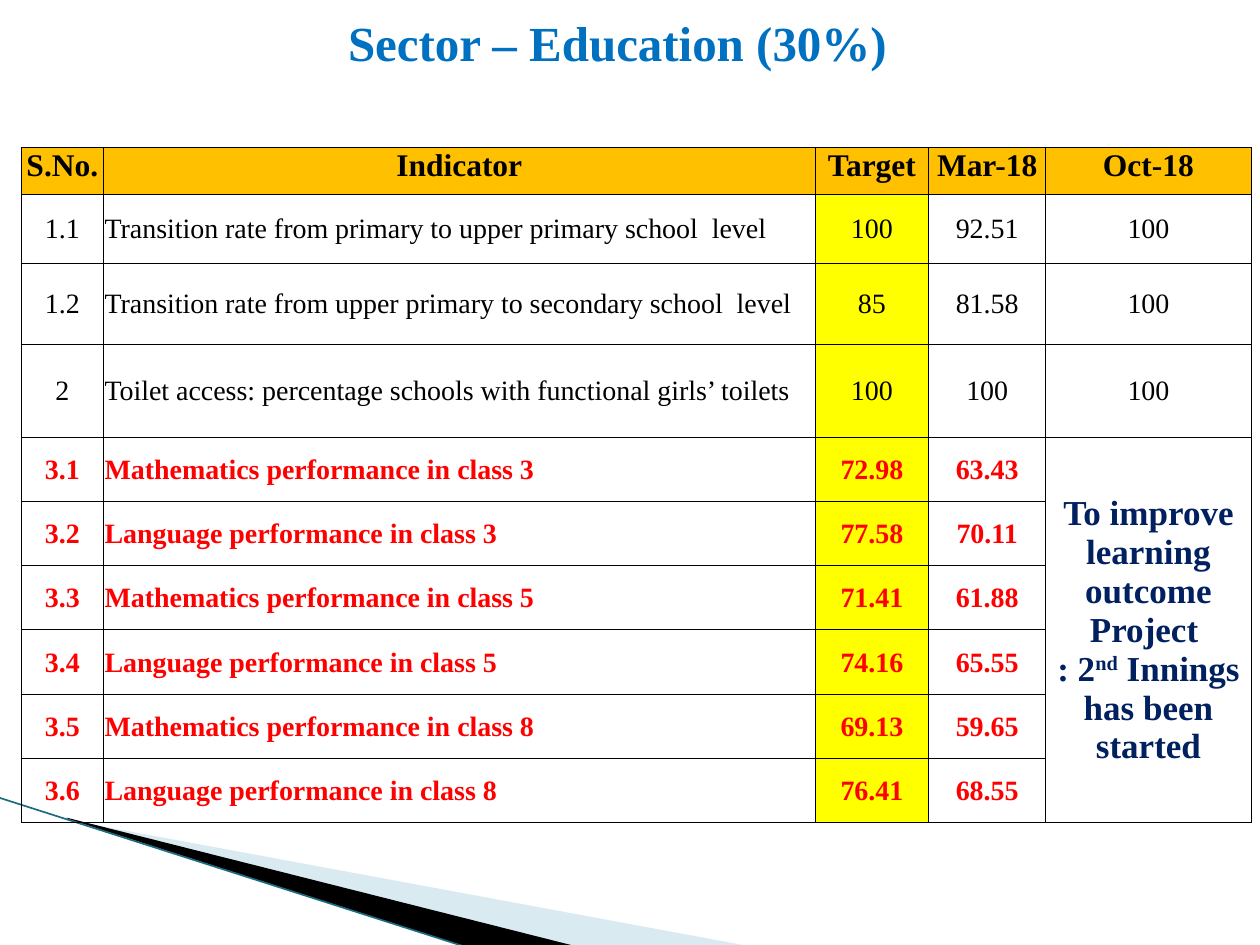
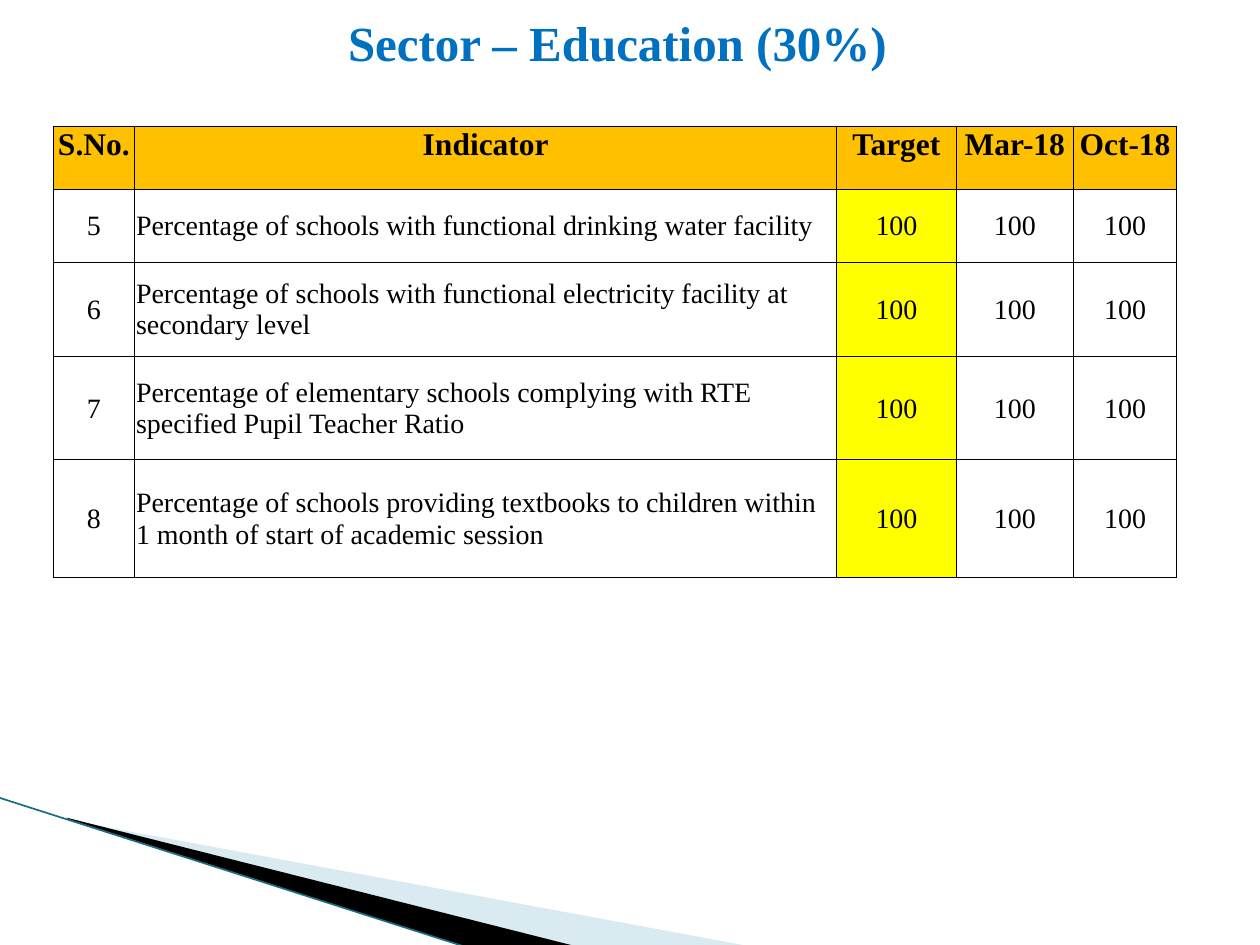
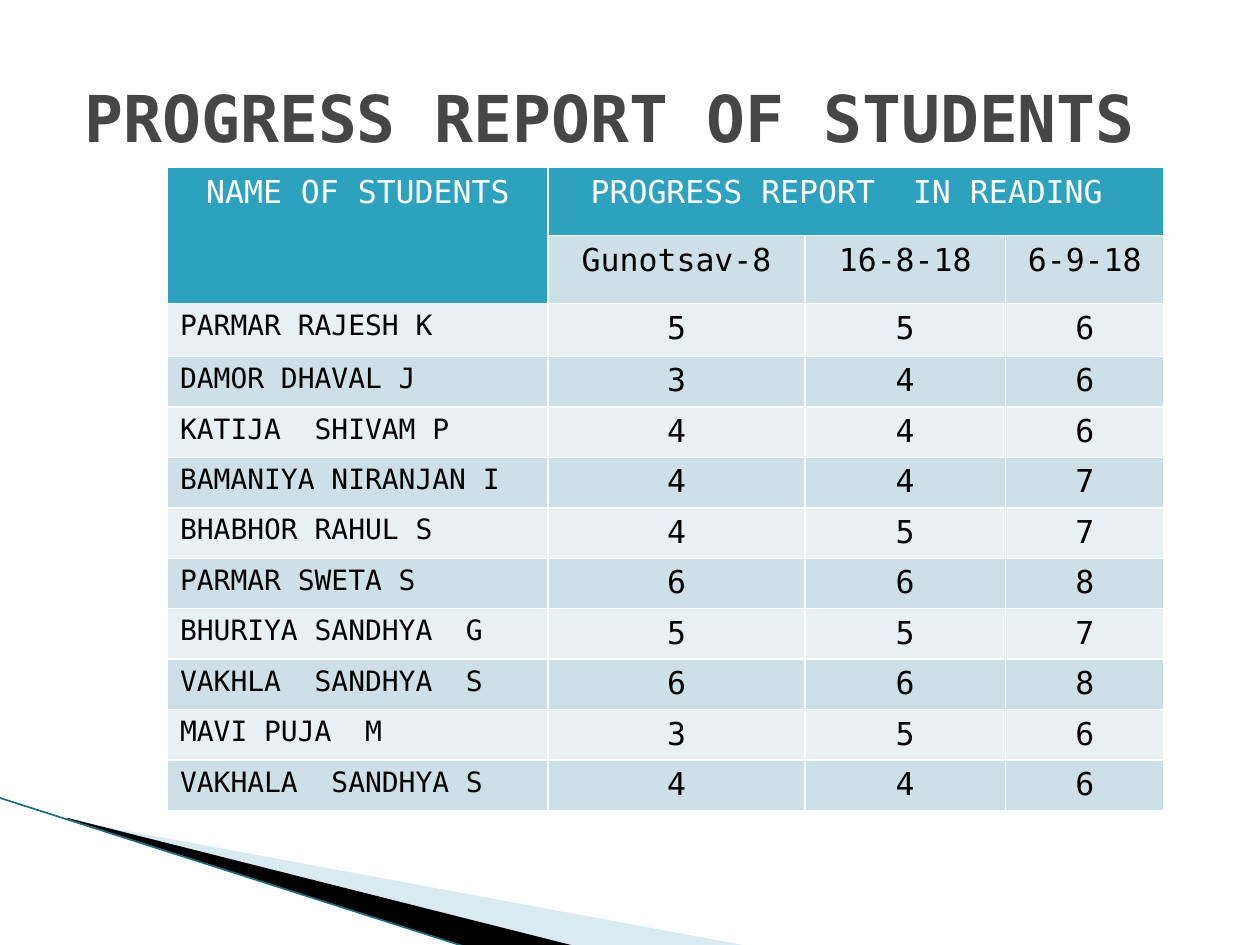
"""Build three slides of education indicators and student reading progress."""
from dataclasses import dataclass, replace

from lxml.etree import SubElement
from pptx import Presentation
from pptx.dml.color import RGBColor
from pptx.enum.shapes import MSO_CONNECTOR
from pptx.enum.text import MSO_ANCHOR, PP_ALIGN
from pptx.oxml.ns import qn
from pptx.slide import Slide
from pptx.table import Table, _Cell
from pptx.text.text import TextFrame
from pptx.util import Inches, Pt

COLORS = {
    "black": "000000", "white": "FFFFFF", "red": "FF0000", "navy": "002060",
    "blue": "0070C0", "gray": "464646", "amber": "FFC000", "yellow": "FFFF00",
    "teal": "2DA2BF", "band_dark": "CDE0E8", "band_light": "E8F0F4",
    "wedge": "A0CBDC", "edge": "1C6C80",
}
SERIF, MONO = "Times New Roman", "DejaVu Sans Mono"


@dataclass(frozen=True)
class TextStyle:
    font: str
    size: float
    color: str
    bold: bool = False
    align: PP_ALIGN = PP_ALIGN.CENTER
    baseline: int = 0


@dataclass(frozen=True)
class Title:
    text: str
    box: tuple[float, float, float, float]
    style: TextStyle


@dataclass(frozen=True)
class Grid:
    left: float
    top: float
    cols: list[float]
    rows: list[float]
    border: str
    border_width: float
    margins: tuple[float, float, float, float]


@dataclass(frozen=True)
class Wedge:
    points: list[tuple[float, float]]
    color: str
    opacity: int


Line = list[tuple[str, TextStyle]]

HEAD = TextStyle(SERIF, 18, "black", True)
BODY = TextStyle(SERIF, 16, "black")
ALERT = TextStyle(SERIF, 16, "red", True)
NOTE = TextStyle(SERIF, 20, "navy", True)
MONO_HEAD = TextStyle(MONO, 18, "white")
SCORE = TextStyle(MONO, 18, "black")
STUDENT = TextStyle(MONO, 16, "black", align=PP_ALIGN.LEFT)

SECTOR_TITLE = Title("Sector – Education (30%)", (0.8, 0, 8.2, 0.67),
                     TextStyle(SERIF, 28, "blue", True))
PROGRESS_TITLE = Title("PROGRESS REPORT OF STUDENTS ", (0.5, 0.3, 9, 1.25),
                       TextStyle(MONO, 36.9, "gray", True))

WEDGES = [
    Wedge([(0.55, 6.51), (5.95, 7.51), (4.56, 7.51), (0.55, 6.5)], "wedge", 40),
    Wedge([(0.53, 6.49), (4.57, 7.51), (3.72, 7.52), (0.54, 6.5)], "black", 100),
]

TIGHT = (0.01, 0.01, 0.01, 0)
ROOMY = (0.1, 0.05, 0.1, 0.05)
LEARNING_GRID = Grid(0.17, 1.17, [0.65, 5.65, 0.9, 0.93, 1.63],
                     [0.37, 0.55, 0.64, 0.74] + [0.51] * 6, "black", 0.5, TIGHT)
FACILITY_GRID = Grid(0.42, 1, [0.65, 5.57, 0.95, 0.93, 0.82],
                     [0.5, 0.58, 0.75, 0.82, 0.93], "black", 0.5, TIGHT)
READING_GRID = Grid(1.33, 1.33, [3.02, 2.04, 1.59, 1.26],
                    [0.54, 0.54, 0.42] + [0.39] * 9, "white", 1, ROOMY)

INDICATOR_HEADERS = ["S.No.", "Indicator", "Target", "Mar-18", "Oct-18"]
TRANSITION = [
    ["1.1", "Transition rate from primary to upper primary school  level",
     "100", "92.51", "100"],
    ["1.2", "Transition rate from upper primary to secondary school  level",
     "85", "81.58", "100"],
    ["2", "Toilet access: percentage schools with functional girls’ toilets",
     "100", "100", "100"],
]
PERFORMANCE = [
    ["3.1", "Mathematics performance in class 3", "72.98", "63.43"],
    ["3.2", "Language performance in class 3", "77.58", "70.11"],
    ["3.3", "Mathematics performance in class 5", "71.41", "61.88"],
    ["3.4", "Language performance in class 5", "74.16", "65.55"],
    ["3.5", "Mathematics performance in class 8", "69.13", "59.65"],
    ["3.6", "Language performance in class 8", "76.41", "68.55"],
]
INNINGS_NOTE: list[Line] = [
    [("To improve learning outcome Project ", NOTE)],
    [(": 2", NOTE), ("nd", replace(NOTE, baseline=30)),
     (" Innings has been started", NOTE)],
]
FACILITIES = [
    [number, text, "100", "100", "100"] for number, text in [
        ("5", "Percentage of schools with functional drinking water facility"),
        ("6", "Percentage of schools with functional electricity facility at "
              "secondary level"),
        ("7", "Percentage of elementary schools complying with RTE specified "
              "Pupil Teacher Ratio"),
        ("8", "Percentage of schools providing textbooks to children within "
              "1 month of start of academic session"),
    ]
]
READING_DATES = ["Gunotsav-8", "16-8-18", "6-9-18"]
READING_LEVELS = [
    ("PARMAR RAJESH K", 5, 5, 6),
    ("DAMOR DHAVAL J", 3, 4, 6),
    ("KATIJA  SHIVAM P", 4, 4, 6),
    ("BAMANIYA NIRANJAN I", 4, 4, 7),
    ("BHABHOR RAHUL S", 4, 5, 7),
    ("PARMAR SWETA S", 6, 6, 8),
    ("BHURIYA SANDHYA  G", 5, 5, 7),
    ("VAKHLA  SANDHYA  S", 6, 6, 8),
    ("MAVI PUJA  M", 3, 5, 6),
    ("VAKHALA  SANDHYA S", 4, 4, 6),
]


def rgb(name: str) -> RGBColor:
    return RGBColor.from_string(COLORS[name])


def write(tf: TextFrame, lines: list[Line]) -> None:
    tf.word_wrap = True
    for i, line in enumerate(lines):
        p = tf.add_paragraph() if i else tf.paragraphs[0]
        p.alignment = line[0][1].align
        for text, style in line:
            r = p.add_run()
            r.text = text
            r.font.name = style.font
            r.font.size = Pt(style.size)
            r.font.bold = style.bold
            r.font.color.rgb = rgb(style.color)
            if style.baseline:
                r._r.get_or_add_rPr().set("baseline", str(style.baseline * 1000))


def add_title(s: Slide, title: Title) -> None:
    sp = s.shapes.add_textbox(*map(Inches, title.box))
    sp.text_frame.vertical_anchor = MSO_ANCHOR.MIDDLE
    write(sp.text_frame, [[(title.text, title.style)]])


def add_wedge(s: Slide, wedge: Wedge) -> None:
    points = [(Inches(x), Inches(y)) for x, y in wedge.points]
    builder = s.shapes.build_freeform(*points[0])
    builder.add_line_segments(points[1:], close=True)
    sp = builder.convert_to_shape()
    sp.shadow.inherit = False
    sp.line.fill.background()
    sp.fill.solid()
    sp.fill.fore_color.rgb = rgb(wedge.color)
    if wedge.opacity < 100:
        color = sp._element.spPr.find(qn("a:solidFill"))[0]
        SubElement(color, qn("a:alpha")).set("val", str(wedge.opacity * 1000))


def add_slide(prs: Presentation) -> Slide:
    s = prs.slides.add_slide(prs.slide_layouts[6])
    for wedge in WEDGES:
        add_wedge(s, wedge)
    edge = s.shapes.add_connector(MSO_CONNECTOR.STRAIGHT, Inches(-0.01),
                                  Inches(6.33), Inches(3.71), Inches(7.52))
    edge.line.color.rgb = rgb("edge")
    edge.line.width = Pt(0.95)
    SubElement(edge._element.spPr, qn("a:effectLst"))
    return s


def set_borders(cell: _Cell, grid: Grid) -> None:
    tc_pr = cell._tc.get_or_add_tcPr()
    for side in "LRTB":
        ln = SubElement(tc_pr, qn(f"a:ln{side}"))
        ln.set("w", str(Pt(grid.border_width)))
        fill = SubElement(ln, qn("a:solidFill"))
        SubElement(fill, qn("a:srgbClr")).set("val", COLORS[grid.border])


def add_grid(s: Slide, grid: Grid) -> Table:
    frame = s.shapes.add_table(
        len(grid.rows), len(grid.cols), Inches(grid.left), Inches(grid.top),
        Inches(sum(grid.cols)), Inches(sum(grid.rows)))
    table = frame.table
    table.first_row = table.horz_banding = False
    for column, width in zip(table.columns, grid.cols):
        column.width = Inches(width)
    for row, height in zip(table.rows, grid.rows):
        row.height = Inches(height)
    for cell in table.iter_cells():
        set_borders(cell, grid)
        cell.fill.background()
        (cell.margin_left, cell.margin_top,
         cell.margin_right, cell.margin_bottom) = map(Inches, grid.margins)
    return table


def fill_cell(cell: _Cell, lines: list[Line], fill: str = "",
              anchor: MSO_ANCHOR = MSO_ANCHOR.TOP) -> None:
    cell.vertical_anchor = anchor
    if fill:
        cell.fill.solid()
        cell.fill.fore_color.rgb = rgb(fill)
    write(cell.text_frame, lines)


def add_indicators(s: Slide, grid: Grid,
                   rows: list[tuple[list[str], TextStyle]]) -> Table:
    table = add_grid(s, grid)
    for c, text in enumerate(INDICATOR_HEADERS):
        fill_cell(table.cell(0, c), [[(text, HEAD)]], "amber")
    for r, (values, style) in enumerate(rows, 1):
        for c, text in enumerate(values):
            header = INDICATOR_HEADERS[c]
            align = PP_ALIGN.LEFT if header == "Indicator" else PP_ALIGN.CENTER
            fill_cell(table.cell(r, c), [[(text, replace(style, align=align))]],
                      "yellow" if header == "Target" else "", MSO_ANCHOR.MIDDLE)
    return table


def add_learning_slide(prs: Presentation) -> None:
    s = add_slide(prs)
    rows = [(v, BODY) for v in TRANSITION] + [(v, ALERT) for v in PERFORMANCE]
    table = add_indicators(s, LEARNING_GRID, rows)
    note = table.cell(len(TRANSITION) + 1, 4)
    note.merge(table.cell(len(rows), 4))
    fill_cell(note, INNINGS_NOTE, anchor=MSO_ANCHOR.MIDDLE)
    add_title(s, SECTOR_TITLE)


def add_facility_slide(prs: Presentation) -> None:
    s = add_slide(prs)
    add_indicators(s, FACILITY_GRID, [(v, BODY) for v in FACILITIES])
    add_title(s, SECTOR_TITLE)


def add_reading_slide(prs: Presentation) -> None:
    s = add_slide(prs)
    add_title(s, PROGRESS_TITLE)
    table = add_grid(s, READING_GRID)
    table.cell(0, 0).merge(table.cell(1, 0))
    table.cell(0, 1).merge(table.cell(0, 3))
    for c, text in enumerate(["NAME OF STUDENTS", "PROGRESS REPORT  IN READING "]):
        fill_cell(table.cell(0, c), [[(text, MONO_HEAD)]], "teal")
    for c, text in enumerate(READING_DATES, 1):
        fill_cell(table.cell(1, c), [[(text, SCORE)]], "band_dark")
    for r, values in enumerate(READING_LEVELS, 2):
        band = "band_dark" if r % 2 else "band_light"
        for c, value in enumerate(values):
            style = SCORE if c else STUDENT
            fill_cell(table.cell(r, c), [[(str(value), style)]], band)


def main() -> None:
    prs = Presentation()
    prs.slide_width, prs.slide_height = Inches(10), Inches(7.5)
    add_learning_slide(prs)
    add_facility_slide(prs)
    add_reading_slide(prs)
    prs.save("out.pptx")


if __name__ == "__main__":
    main()
